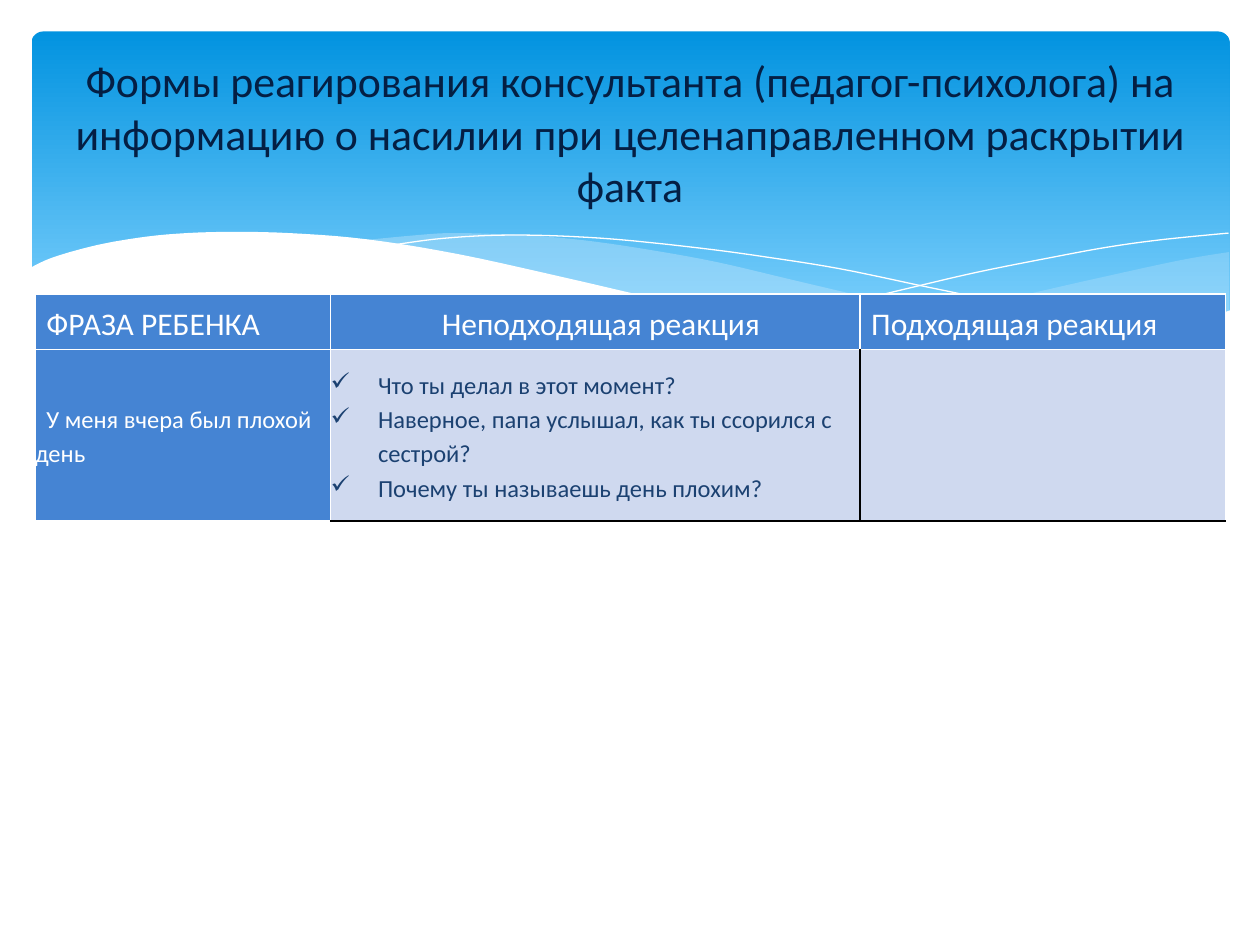
from lxml.etree import SubElement
from pptx import Presentation
from pptx.dml.color import RGBColor
from pptx.enum.shapes import MSO_SHAPE as Shape
from pptx.enum.text import MSO_ANCHOR as Anchor, PP_ALIGN as Align
from pptx.oxml import parse_xml
from pptx.oxml.ns import nsdecls, qn
from pptx.util import Pt

WHITE = RGBColor(0xFF, 0xFF, 0xFF)
BLACK = RGBColor(0x00, 0x00, 0x00)
SKY_TOP = RGBColor(0x02, 0x93, 0xE0)
SKY_BOTTOM = RGBColor(0x83, 0xD3, 0xFE)
MIST = RGBColor(0xC6, 0xE7, 0xFC)
NAVY = RGBColor(0x04, 0x1F, 0x44)
HEADER_BLUE = RGBColor(0x45, 0x84, 0xD3)
CELL_BLUE = RGBColor(0xCF, 0xD9, 0xEF)
CELL_TEXT = RGBColor(0x1B, 0x41, 0x71)


def smooth(knots, steps=5):
    """Return points of a Catmull-Rom curve through the knots."""
    ends = [knots[0], *knots, knots[-1]]
    curve = [knots[0]]
    for a, b, c, d in zip(ends, ends[1:], ends[2:], ends[3:]):
        for step in range(1, steps + 1):
            t = step / steps
            curve.append(tuple(
                q + t / 2 * (r - p + t * (2 * p - 5 * q + 4 * r - s
                                          + t * (3 * (q - r) + s - p)))
                for p, q, r, s in zip(a, b, c, d)))
    return curve


class SlideBuilder:
    font = "Calibri"

    def __init__(self, slide):
        self.slide = slide
        self.shapes = slide.shapes

    def panel(self, left, top, width, height, radius, colors, last_stop):
        panel = self.shapes.add_shape(
            Shape.ROUNDED_RECTANGLE, Pt(left), Pt(top), Pt(width), Pt(height))
        panel.adjustments[0] = radius
        panel.shadow.inherit = False
        panel.line.fill.background()
        panel.fill.gradient()
        panel.fill.gradient_angle = 270
        for stop, color, position in zip(panel.fill.gradient_stops, colors, (0, last_stop)):
            stop.color.rgb = color
            stop.position = position

    def outline(self, points, close):
        (x, y), *rest = [(Pt(x), Pt(y)) for x, y in points]
        builder = self.shapes.build_freeform(x, y)
        builder.add_line_segments(rest, close=close)
        shape = builder.convert_to_shape()
        shape.shadow.inherit = False
        return shape

    def wave(self, points, color, opacity=100):
        wave = self.outline(points, close=True)
        wave.line.fill.background()
        wave.fill.solid()
        wave.fill.fore_color.rgb = color
        if opacity < 100:
            rgb = wave.fill._xPr.find(qn("a:solidFill"))[0]
            SubElement(rgb, qn("a:alpha"), val=str(opacity * 1000))

    def thread(self, points, color):
        thread = self.outline(points, close=False)
        thread.fill.background()
        thread.line.color.rgb = color
        thread.line.width = Pt(0)

    def style(self, paragraph, size, color, align=Align.LEFT):
        paragraph.alignment = align
        paragraph.font.name = self.font
        paragraph.font.size = Pt(size)
        paragraph.font.color.rgb = color

    def title(self, text, left, top, width, height, size, color):
        box = self.shapes.add_textbox(Pt(left), Pt(top), Pt(width), Pt(height))
        frame = box.text_frame
        frame.word_wrap = True
        frame.vertical_anchor = Anchor.MIDDLE
        frame.text = text
        self.style(frame.paragraphs[0], size, color, Align.CENTER)

    def table(self, left, top, widths, heights):
        table = self.shapes.add_table(
            len(heights), len(widths), Pt(left), Pt(top),
            Pt(sum(widths)), Pt(sum(heights))).table
        table.first_row = table.horz_banding = False
        for column, width in zip(table.columns, widths):
            column.width = Pt(width)
        for row, height in zip(table.rows, heights):
            row.height = Pt(height)
        return table

    def cell(self, cell, lines, size, color, fill, align=Align.LEFT, bullet=None, black_sides=""):
        cell.margin_left = cell.margin_right = cell.margin_top = cell.margin_bottom = 0
        cell.vertical_anchor = Anchor.MIDDLE
        cell.fill.solid()
        cell.fill.fore_color.rgb = fill
        for index, side in enumerate("LRTB"):
            edge = BLACK if side in black_sides else WHITE
            cell._tc.tcPr.insert(index, parse_xml(
                f'<a:ln{side} {nsdecls("a")} w="{Pt(1)}"><a:solidFill>'
                f'<a:srgbClr val="{edge}"/></a:solidFill></a:ln{side}>'))
        cell.text = "\n".join(lines)
        for paragraph in cell.text_frame.paragraphs:
            margin, indent = (27, -27) if bullet else (0, 6.5)
            props = paragraph._p.get_or_add_pPr()
            props.set("marL", str(Pt(margin)))
            props.set("indent", str(Pt(indent)))
            if bullet:
                SubElement(props, qn("a:buChar"), char=bullet)
            paragraph.line_spacing = 1.15
            self.style(paragraph, size, color, align)


def main():
    deck = Presentation()
    deck.slide_width, deck.slide_height = Pt(720), Pt(540)
    page = SlideBuilder(deck.slides.add_slide(deck.slide_layouts[6]))

    # Sky panel with layered waves
    page.panel(18, 18, 684.7, 194.4, 0.034, (SKY_TOP, SKY_BOTTOM), 0.9)
    page.wave(
        smooth([(702.5, 144), (673, 149), (620, 160.6), (561, 174), (508, 185), (476, 191)])
        + smooth([(476, 191), (507.6, 195), (545, 198.7), (586, 200), (628, 197.3),
                  (663, 191), (683, 185), (702.5, 178)]),
        MIST, 29)
    page.wave(
        smooth([(643, 196.5), (602.6, 190.8), (558, 183), (508, 172.8), (453, 160),
                (409.7, 149.8), (370, 142.6), (335, 137.5), (302, 134.6), (260, 133.2),
                (236, 134.6), (206, 137.5)])
        + smooth([(206, 137.5), (246, 143.3), (291, 152), (323, 160), (381.6, 172.8),
                  (432.7, 183.6), (479, 191.5), (520, 197.3), (565, 200), (603, 200),
                  (643, 196.5)]),
        MIST, 40)
    page.thread(
        smooth([(222.5, 140.4), (247.7, 136.8), (278.6, 134.6), (311.8, 134.6), (352, 136.8),
                (400, 141.8), (437.8, 146.9), (478.8, 153.4), (523.4, 162.7),
                (572.4, 173.5), (653, 195.8)]),
        WHITE)
    page.thread(
        smooth([(441.4, 185), (483.8, 173.5), (518.4, 164.9), (558.7, 155.5), (602, 146.9),
                (634.3, 141), (665.3, 136.8), (702, 133.2)]),
        WHITE)
    page.wave(
        smooth([(703.4, 177.1), (676.8, 186.5), (647.3, 193.7), (612, 198), (582.5, 199.4),
                (535.7, 197.3), (481, 190.8), (434.2, 182.9), (380.9, 172), (321.8, 158.4),
                (262.8, 145.4), (210.2, 136.8), (165.6, 133.2), (127.4, 132.5), (95, 134),
                (68.4, 137.5), (48.2, 141.8), (28.8, 147.6), (16.6, 153.4)])
        + [(16.6, 236.9), (703.4, 236.9)],
        WHITE)

    # Title
    page.title(
        "Формы реагирования консультанта (педагог-психолога) на информацию "
        "о насилии при целенаправленном раскрытии факта",
        36, 26.6, 648, 98.6, 25, NAVY)

    # Table of reactions
    reactions = page.table(20, 168, (169, 302.4, 209), (31.7, 97.9))
    headings = (("ФРАЗА РЕБЕНКА", Align.LEFT), ("Неподходящая реакция", Align.CENTER),
                ("Подходящая реакция", Align.LEFT))
    for column, (heading, align) in enumerate(headings):
        page.cell(reactions.cell(0, column), [heading], 18, WHITE, HEADER_BLUE, align)
    page.cell(reactions.cell(1, 0), ["У меня вчера был плохой день"], 14, WHITE, HEADER_BLUE)
    page.cell(
        reactions.cell(1, 1),
        ["Что ты делал в этот момент?",
         "Наверное, папа услышал, как ты ссорился с сестрой?",
         "Почему ты называешь день плохим?"],
        14, CELL_TEXT, CELL_BLUE, bullet="✓", black_sides="RB")
    page.cell(reactions.cell(1, 2), [], 14, CELL_TEXT, CELL_BLUE, black_sides="LB")

    deck.save("out.pptx")


if __name__ == "__main__":
    main()
